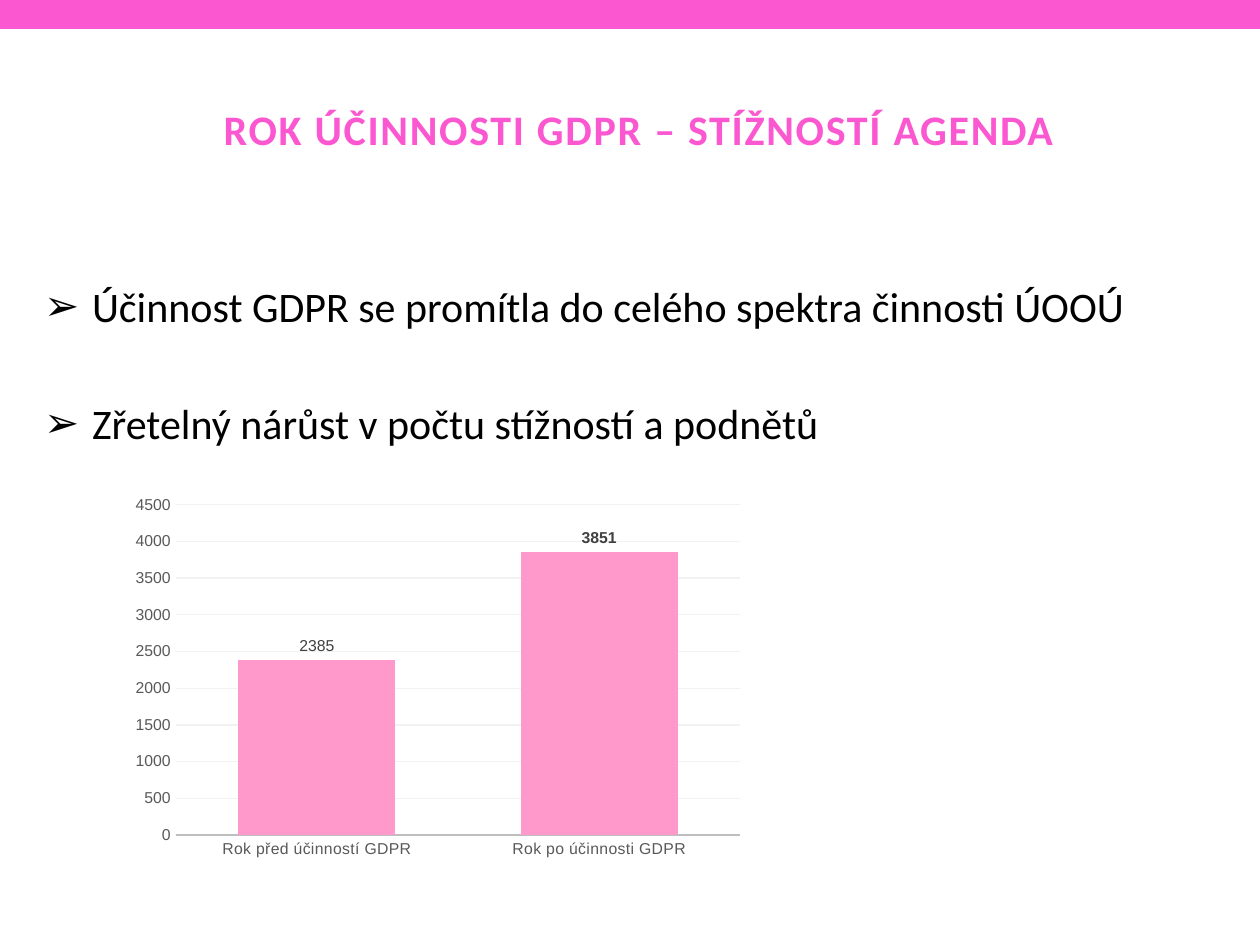
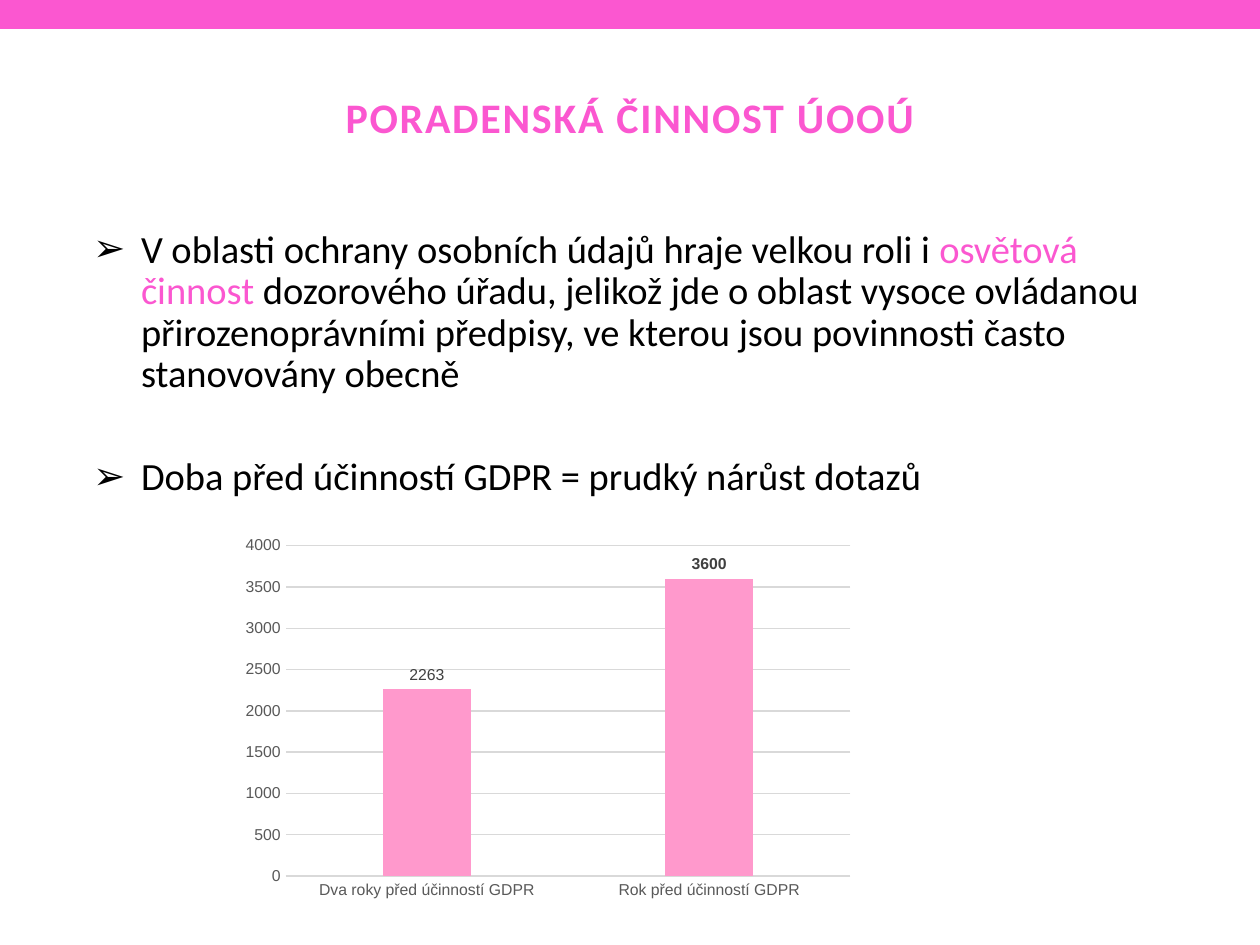
from dataclasses import dataclass

from lxml import etree
from pptx import Presentation
from pptx.chart.data import CategoryChartData
from pptx.dml.color import RGBColor
from pptx.enum.chart import XL_CHART_TYPE, XL_LABEL_POSITION, XL_TICK_MARK
from pptx.enum.shapes import MSO_SHAPE
from pptx.enum.text import MSO_ANCHOR, MSO_AUTO_SIZE, PP_ALIGN
from pptx.oxml.ns import qn
from pptx.util import Emu, Pt

# Enum members
COLUMNS = XL_CHART_TYPE.COLUMN_CLUSTERED
OUTSIDE = XL_LABEL_POSITION.OUTSIDE_END
NO_TICK = XL_TICK_MARK.NONE
RECT = MSO_SHAPE.RECTANGLE
TOP, MIDDLE = MSO_ANCHOR.TOP, MSO_ANCHOR.MIDDLE
NO_FIT = MSO_AUTO_SIZE.NONE
CENTER = PP_ALIGN.CENTER

# Shared style
PINK = RGBColor(0xFB, 0x57, 0xD0)
BAR_PINK = RGBColor(0xFF, 0x99, 0xCC)
BLACK = RGBColor(0, 0, 0)
AXIS_TEXT = RGBColor(0x59, 0x59, 0x59)
LABEL_TEXT = RGBColor(0x40, 0x40, 0x40)
AXIS_GREY = RGBColor(0xBF, 0xBF, 0xBF)
GRID_GREY = RGBColor(0xD9, 0xD9, 0xD9)
GRID_LIGHT = RGBColor(0xF2, 0xF2, 0xF2)
TEXT_FONT, CHART_FONT = "Calibri", "Arial"

PX = 914400 // 126
SLIDE_W, SLIDE_H = 1260, 945
BAND_H = 29
INDENT = 48
CHART_W, CHART_H = 630, 378


@dataclass(frozen=True)
class Box:
    x: int
    y: int
    w: int
    h: int


@dataclass(frozen=True)
class Run:
    text: str
    color: RGBColor = BLACK


@dataclass(frozen=True)
class BulletList:
    box: Box
    size: int
    line_spacing: float
    gap: int
    items: list[list[Run]]


@dataclass(frozen=True)
class ColumnChart:
    x: int
    y: int
    values: dict[str, int]
    top: int
    gap_width: int
    overlap: int
    axis_color: RGBColor
    axis_width: float
    grid_color: RGBColor
    letter_spacing: int = 0


@dataclass(frozen=True)
class ChartSlide:
    title: str
    title_box: Box
    bullets: BulletList
    chart: ColumnChart


def px(n: int) -> Emu:
    return Emu(n * PX)


def place(sp, box: Box) -> None:
    sp.left, sp.top, sp.width, sp.height = map(px, (box.x, box.y, box.w, box.h))


def style(font, name: str, size: int, color: RGBColor, bold: bool = False) -> None:
    font.name, font.size, font.bold = name, Pt(size), bold
    font.color.rgb = color


def add_band(s) -> None:
    sp = s.shapes.add_shape(RECT, 0, 0, px(SLIDE_W), px(BAND_H))
    sp.shadow.inherit = False
    sp.fill.solid()
    sp.fill.fore_color.rgb = PINK
    sp.line.fill.background()


def set_title(s, text: str, box: Box) -> None:
    sp = s.shapes.title
    place(sp, box)
    tf = sp.text_frame
    tf.auto_size, tf.vertical_anchor = NO_FIT, MIDDLE
    p = tf.paragraphs[0]
    p.alignment = CENTER
    r = p.add_run()
    r.text = text
    style(r.font, TEXT_FONT, 24, PINK, bold=True)
    r.font._element.set("spc", "100")


def set_bullets(s, bullets: BulletList) -> None:
    sp = s.placeholders[1]
    place(sp, bullets.box)
    tf = sp.text_frame
    tf.word_wrap, tf.auto_size, tf.vertical_anchor = True, NO_FIT, TOP
    tf.margin_left = tf.margin_right = tf.margin_top = tf.margin_bottom = 0
    for i, runs in enumerate(bullets.items):
        p = tf.add_paragraph() if i else tf.paragraphs[0]
        pPr = p._p.get_or_add_pPr()
        pPr.set("marL", str(px(INDENT)))
        pPr.set("indent", str(-px(INDENT)))
        etree.SubElement(pPr, qn("a:buChar")).set("char", "➢")
        p.line_spacing = bullets.line_spacing
        p.space_before = Pt(bullets.gap if i else 0)
        p.space_after = Pt(0)
        for run in runs:
            r = p.add_run()
            r.text = run.text
            style(r.font, TEXT_FONT, bullets.size, run.color)


def add_column_chart(s, spec: ColumnChart) -> None:
    data = CategoryChartData()
    data.categories = list(spec.values)
    data.add_series("Series 1", list(spec.values.values()))
    chart = s.shapes.add_chart(
        COLUMNS, px(spec.x), px(spec.y), px(CHART_W), px(CHART_H), data
    ).chart
    chart.has_title = chart.has_legend = False
    style(chart.font, CHART_FONT, 10, BLACK)

    # Axes and grid
    cat, val = chart.category_axis, chart.value_axis
    for axis in (cat, val):
        axis.major_tick_mark = axis.minor_tick_mark = NO_TICK
        style(axis.tick_labels.font, CHART_FONT, 9, AXIS_TEXT)
    cat.tick_labels.font._element.set("spc", str(spec.letter_spacing))
    cat.format.line.color.rgb = spec.axis_color
    cat.format.line.width = Pt(spec.axis_width)
    val.format.line.fill.background()
    val.minimum_scale, val.maximum_scale, val.major_unit = 0, spec.top, 500
    grid = val.major_gridlines.format.line
    grid.color.rgb, grid.width = spec.grid_color, Pt(0.75)

    # Columns
    plot = chart.plots[0]
    plot.vary_by_categories = False
    plot.gap_width, plot.overlap = spec.gap_width, spec.overlap
    series = plot.series[0]
    series.format.fill.solid()
    series.format.fill.fore_color.rgb = BAR_PINK

    # Value labels, the last one in bold
    labels = series.data_labels
    labels.show_value, labels.position = True, OUTSIDE
    style(labels.font, CHART_FONT, 9, LABEL_TEXT)
    last = series.points[len(spec.values) - 1].data_label
    style(last.font, CHART_FONT, 9, LABEL_TEXT, bold=True)
    last.position = OUTSIDE


SLIDES = [
    ChartSlide(
        "ROK ÚČINNOSTI GDPR – STÍŽNOSTÍ AGENDA",
        Box(64, 76, 1150, 106),
        BulletList(
            Box(44, 281, 1171, 180), 24, 1.0, 38,
            [
                [Run("Účinnost GDPR se promítla do celého spektra činnosti ÚOOÚ")],
                [Run("Zřetelný nárůst v počtu stížností a podnětů")],
            ],
        ),
        ColumnChart(
            123, 488,
            {"Rok před účinností GDPR": 2385, "Rok po účinnosti GDPR": 3851},
            4500, 80, 25, AXIS_GREY, 1.25, GRID_LIGHT, letter_spacing=20,
        ),
    ),
    ChartSlide(
        "PORADENSKÁ ČINNOST ÚOOÚ",
        Box(63, 38, 1134, 158),
        BulletList(
            Box(93, 230, 1091, 280), 22, 0.9, 35,
            [
                [
                    Run("V oblasti ochrany osobních údajů hraje velkou roli i "),
                    Run("osvětová činnost ", PINK),
                    Run("dozorového úřadu, jelikož jde o oblast vysoce ovládanou "
                        "přirozenoprávními předpisy, ve kterou jsou povinnosti "
                        "často stanovovány obecně"),
                ],
                [Run("Doba před účinností GDPR = prudký nárůst dotazů")],
            ],
        ),
        ColumnChart(
            233, 529,
            {"Dva roky před účinností GDPR": 2263, "Rok před účinností GDPR": 3600},
            4000, 219, -27, GRID_GREY, 0.75, GRID_GREY,
        ),
    ),
]


def main() -> None:
    prs = Presentation()
    prs.slide_width, prs.slide_height = px(SLIDE_W), px(SLIDE_H)
    for content in SLIDES:
        s = prs.slides.add_slide(prs.slide_layouts[1])
        add_band(s)
        set_title(s, content.title, content.title_box)
        set_bullets(s, content.bullets)
        add_column_chart(s, content.chart)
    prs.save("out.pptx")


if __name__ == "__main__":
    main()
